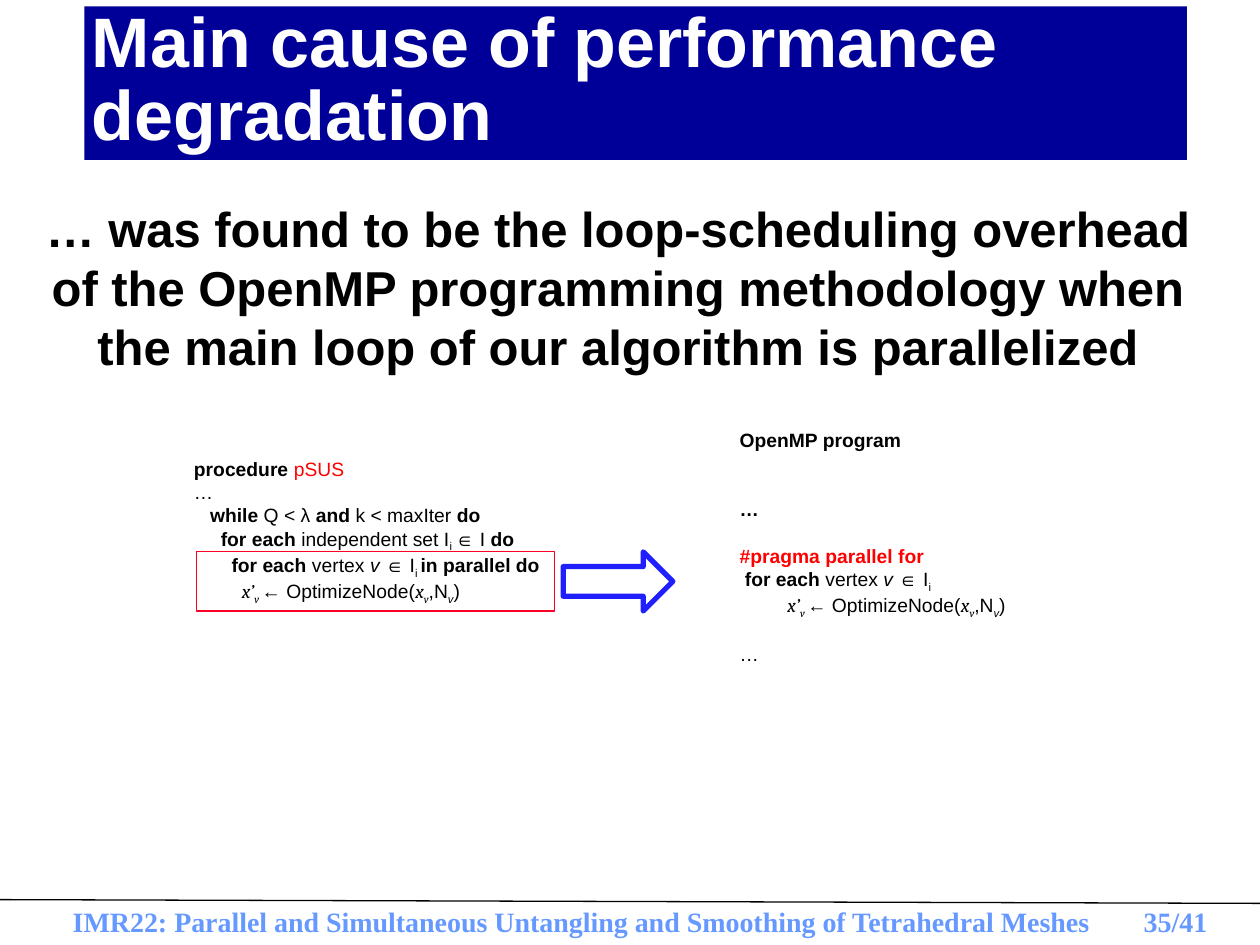
"""Build the slide on the main cause of performance degradation."""
from dataclasses import dataclass

from lxml import etree
from pptx import Presentation
from pptx.dml.color import RGBColor
from pptx.enum import shapes, text
from pptx.oxml import ns
from pptx.util import Inches, Pt


@dataclass(frozen=True)
class Theme:
    """Colours, fonts and type sizes of the slide."""

    black: str = "000000"
    white: str = "FFFFFF"
    navy: str = "000099"
    red: str = "FF0000"
    frame: str = "FC0128"
    arrow: str = "2020FF"
    footer: str = "6699FF"
    sans: str = "Arial"
    serif: str = "Times New Roman"
    math: str = "Cambria"
    title_size: int = 40
    body_size: int = 28
    footer_size: int = 16
    code_size: int = 11


THEME = Theme()
TITLE = "Main cause of performance degradation"
FINDING = (
    "… was found to be the loop-scheduling overhead of the OpenMP programming "
    "methodology when the main loop of our algorithm is parallelized"
)
FOOTER = "IMR22: Parallel and Simultaneous Untangling and Smoothing of Tetrahedral Meshes \t35/41"

STYLES = {
    "plain": {},
    "bold": {"bold": True},
    "italic": {"italic": True},
    "red": {"color": THEME.red},
    "pragma": {"bold": True, "color": THEME.red},
    "math": {"italic": True, "font": THEME.math},
    "math sub": {"italic": True, "font": THEME.math, "subscript": True},
    "italic sub": {"italic": True, "subscript": True},
    "sub": {"subscript": True},
}

OPTIMIZE = [
    (" \t", "plain"), ("x’", "math"), ("v ", "math sub"), ("← OptimizeNode(", "plain"),
    ("x", "math"), ("v", "math sub"), (",N", "plain"), ("v", "italic sub"), (")", "plain"),
]
VERTEX = [("for each", "bold"), (" vertex ", "plain"), ("v ", "italic"), ("∈ I", "plain")]

# each line: blank lines above it, then its spans
PROCEDURE = [
    (0, [("procedure ", "bold"), ("pSUS", "red")]),
    (0, [("…", "plain")]),
    (0, [("   ", "plain"), ("while", "bold"), (" Q < λ ", "plain"), ("and", "bold"),
         (" k < maxIter ", "plain"), ("do", "bold")]),
    (0, [("     ", "plain"), ("for each", "bold"), (" independent set I", "plain"),
         ("i ", "sub"), ("∈ I ", "plain"), ("do", "bold")]),
    (0, [("       ", "plain"), *VERTEX, ("i ", "sub"), ("in parallel do", "bold")]),
    (0, OPTIMIZE),
]
PROGRAM = [
    (0, [("OpenMP program", "bold")]),
    (2, [("…", "bold")]),
    (1, [("#pragma parallel for", "pragma")]),
    (0, [(" ", "plain"), *VERTEX, ("i", "sub")]),
    (0, OPTIMIZE),
    (1, [("…", "plain")]),
]


def add_span(para, content, *, size, font=THEME.sans, color=THEME.black,
             bold=False, italic=False, subscript=False):
    """Append formatted text to a paragraph."""
    span = para.add_run()
    span.text = content
    span.font.size = Pt(size)
    span.font.name = font
    span.font.bold = bold
    span.font.italic = italic
    span.font.color.rgb = RGBColor.from_string(color)
    if subscript:
        span.font._element.set("baseline", "-25000")


def prepare_frame(box, side=0.1, top=0.05):
    """Set wrapping, anchor and insets, and return the text frame."""
    frame = box.text_frame
    frame.word_wrap = True
    frame.vertical_anchor = text.MSO_ANCHOR.TOP
    frame.margin_left = frame.margin_right = Inches(side)
    frame.margin_top = frame.margin_bottom = Inches(top)
    return frame


def add_box(page, place):
    """Add a text box at left, top, width, height."""
    return page.shapes.add_textbox(*map(Inches, place))


def add_centred(page, place, content, **style):
    """Add a centred line of text."""
    para = prepare_frame(add_box(page, place)).paragraphs[0]
    para.alignment = text.PP_ALIGN.CENTER
    add_span(para, content, **style)


def add_code(page, place, lines, hang=0.38):
    """Add a listing with hanging indents."""
    frame = prepare_frame(add_box(page, place), side=0.08, top=0.04)
    for index, (blanks, spans) in enumerate(lines):
        para = frame.paragraphs[0] if index == 0 else frame.add_paragraph()
        properties = para._p.get_or_add_pPr()
        properties.set("marL", str(Inches(hang)))
        properties.set("indent", str(-Inches(hang)))
        if blanks:
            para.space_before = Pt(blanks * 1.2 * THEME.code_size)
        for content, style in spans:
            add_span(para, content, size=THEME.code_size, **STYLES[style])


def add_shape(page, kind, place, fill=None, line=None, width=0.75):
    """Add a flat preset shape."""
    shape = page.shapes.add_shape(kind, *map(Inches, place))
    shape.shadow.inherit = False
    if fill:
        shape.fill.solid()
        shape.fill.fore_color.rgb = RGBColor.from_string(fill)
    else:
        shape.fill.background()
    if line:
        shape.line.color.rgb = RGBColor.from_string(line)
        shape.line.width = Pt(width)
    else:
        shape.line.fill.background()
    return shape


def add_rule(page, start, end):
    """Add the thin line above the footer."""
    rule = page.shapes.add_connector(
        shapes.MSO_CONNECTOR.STRAIGHT, *map(Inches, (*start, *end)))
    rule.line.color.rgb = RGBColor.from_string(THEME.black)
    rule.line.width = Pt(0.75)
    etree.SubElement(rule._element.spPr, ns.qn("a:effectLst"))


def add_title(page, place):
    """Add the title on its filled bar."""
    bar = add_shape(page, shapes.MSO_SHAPE.RECTANGLE, place, fill=THEME.navy)
    para = prepare_frame(bar, side=0.06, top=0.02).paragraphs[0]
    para.alignment = text.PP_ALIGN.LEFT
    para.line_spacing = 0.87
    add_span(para, TITLE, size=THEME.title_size, color=THEME.white, bold=True)


def main():
    """Assemble and save the deck."""
    deck = Presentation()
    deck.slide_width, deck.slide_height = Inches(10), Inches(7.5)
    page = deck.slides.add_slide(deck.slide_layouts[6])
    add_centred(page, (-0.04, 7.13, 10.24, 0.37), FOOTER, size=THEME.footer_size,
                font=THEME.serif, color=THEME.footer, bold=True)
    add_rule(page, (0, 7.14), (10, 7.17))
    add_title(page, (0.67, 0.05, 8.75, 1.22))
    add_code(page, (1.46, 3.59, 3.64, 4.25), PROCEDURE)
    add_centred(page, (0.16, 1.53, 9.49, 1.52), FINDING, size=THEME.body_size, bold=True)
    add_code(page, (5.79, 3.36, 3.64, 4.25), PROGRAM)
    add_shape(page, shapes.MSO_SHAPE.RECTANGLE, (1.56, 4.38, 2.84, 0.47), line=THEME.frame)
    add_shape(page, shapes.MSO_SHAPE.RIGHT_ARROW, (4.47, 4.38, 0.87, 0.47),
              line=THEME.arrow, width=3)
    deck.save("out.pptx")


if __name__ == "__main__":
    main()
